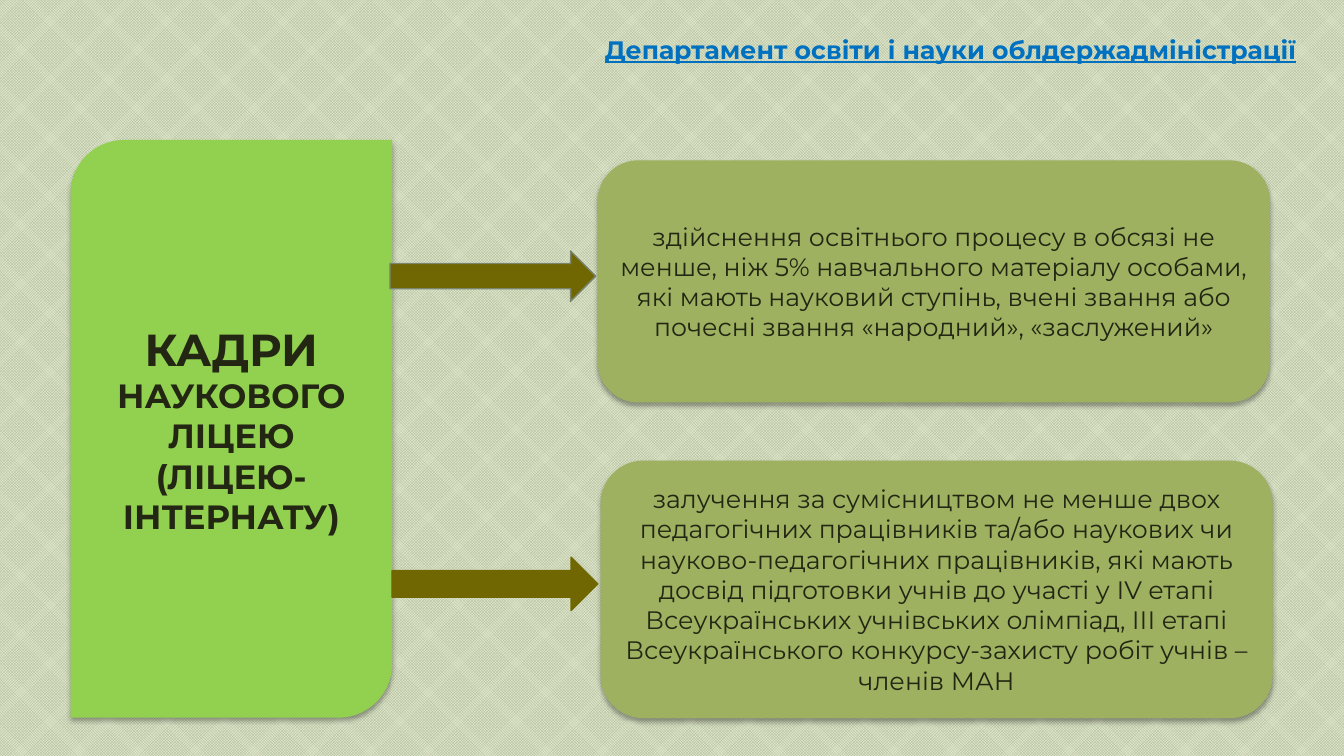
"""Build the slide on the staff of a science lyceum."""
from lxml.etree import SubElement
from pptx import Presentation
from pptx.dml.color import RGBColor
from pptx.enum.dml import MSO_PATTERN
from pptx.enum.shapes import MSO_SHAPE
from pptx.enum.text import MSO_ANCHOR, MSO_AUTO_SIZE, PP_ALIGN
from pptx.oxml.ns import qn
from pptx.util import Pt

HEAD = "Департамент освіти і науки облдержадміністрації"
LABEL = [("КАДРИ", 32), (" НАУКОВОГО ЛІЦЕЮ (ЛІЦЕЮ-ІНТЕРНАТУ)", 24)]
NEEDS = [
    ("здійснення освітнього процесу в обсязі не менше, ніж 5% навчального "
     "матеріалу особами, які мають науковий ступінь, вчені звання або почесні "
     "звання «народний», «заслужений»", (427, 114.5, 480, 173)),
    ("залучення за сумісництвом не менше двох педагогічних працівників та/або "
     "наукових чи науково-педагогічних працівників, які мають досвід "
     "підготовки учнів до участі у ІV етапі Всеукраїнських учнівських "
     "олімпіад, ІІІ етапі Всеукраїнського конкурсу-захисту робіт учнів – "
     "членів МАН", (429, 329, 480, 184)),
]
ARROWS = [((278.6, 179.3, 147, 36), "7A866C"), ((280, 398, 147, 38), "706702")]
HEAD_BOX = (424.8, 20.9, 535, 29)
LABEL_BOX = (50.4, 100, 229.7, 412.6)

HEAD_FONT = {"name": "Montserrat", "size": Pt(18), "bold": True, "underline": True}
LABEL_FONT = {"name": "Montserrat", "bold": True}
NEED_FONT = {"name": "Montserrat", "bold": False}
FRAME = {"word_wrap": True, "vertical_anchor": MSO_ANCHOR.MIDDLE}
HEAD_FRAME = {"word_wrap": True, "vertical_anchor": MSO_ANCHOR.TOP,
              "auto_size": MSO_AUTO_SIZE.SHAPE_TO_FIT_TEXT}
SHADOW = {"blurRad": Pt(3.5), "dist": Pt(2.2), "dir": 5400000, "rotWithShape": 0}


def color(code):
    return RGBColor.from_string(code)


def apply(item, values):
    for key, value in values.items():
        setattr(item, key, value)


def cast(effects):
    outer = SubElement(effects, qn("a:outerShdw"))
    for key, value in SHADOW.items():
        outer.set(key, str(int(value)))
    tint = SubElement(outer, qn("a:srgbClr"), val="000000")
    SubElement(tint, qn("a:alpha"), val="32000")


def place(item, box):
    apply(item, dict(zip(("left", "top", "width", "height"), map(Pt, box))))


def write(para, text, values, ink):
    run = para.add_run()
    run.text = text
    apply(run.font, values)
    run.font.color.rgb = color(ink)
    return run


def draw(slide, kind, box, fill, line=None):
    shape = slide.shapes.add_shape(kind, *map(Pt, box))
    shape.fill.solid()
    shape.fill.fore_color.rgb = color(fill)
    shape.shadow.inherit = False
    if line:
        shape.line.color.rgb = color(line)
        shape.line.width = Pt(1)
    else:
        shape.line.fill.background()
    return shape


def panel(slide, kind, box, fill, parts, values):
    shape = draw(slide, kind, box, fill)
    cast(shape.element.spPr.find(qn("a:effectLst")))
    apply(shape.text_frame, FRAME)
    para = shape.text_frame.paragraphs[0]
    para.alignment = PP_ALIGN.CENTER
    for text, size in parts:
        write(para, text, {**values, "size": Pt(size)}, "222613")


def header(slide):
    title = slide.shapes.title
    place(title, HEAD_BOX)
    apply(title.text_frame, HEAD_FRAME)
    para = title.text_frame.paragraphs[0]
    para.alignment = PP_ALIGN.LEFT
    write(para, HEAD, HEAD_FONT, "0070C0")
    props = next(title.element.iter(qn("a:rPr")))
    effects = SubElement(props, qn("a:effectLst"))
    props.find(qn("a:solidFill")).addnext(effects)
    cast(effects)


def main():
    deck = Presentation()
    apply(deck, {"slide_width": Pt(960), "slide_height": Pt(540)})
    slide = deck.slides.add_slide(deck.slide_layouts[5])
    back = slide.background.fill
    back.patterned()
    back.pattern = MSO_PATTERN.SMALL_CHECKER_BOARD
    back.fore_color.rgb = color("A5B592")
    back.back_color.rgb = color("DFE5CA")
    header(slide)
    panel(slide, MSO_SHAPE.ROUND_2_DIAG_RECTANGLE, LABEL_BOX, "92D050",
          LABEL, LABEL_FONT)
    for text, box in NEEDS:
        panel(slide, MSO_SHAPE.ROUNDED_RECTANGLE, box, "9EB160",
              [(text, 18)], NEED_FONT)
    for box, line in ARROWS:
        draw(slide, MSO_SHAPE.RIGHT_ARROW, box, "706702", line)
    deck.save("out.pptx")


if __name__ == "__main__":
    main()
